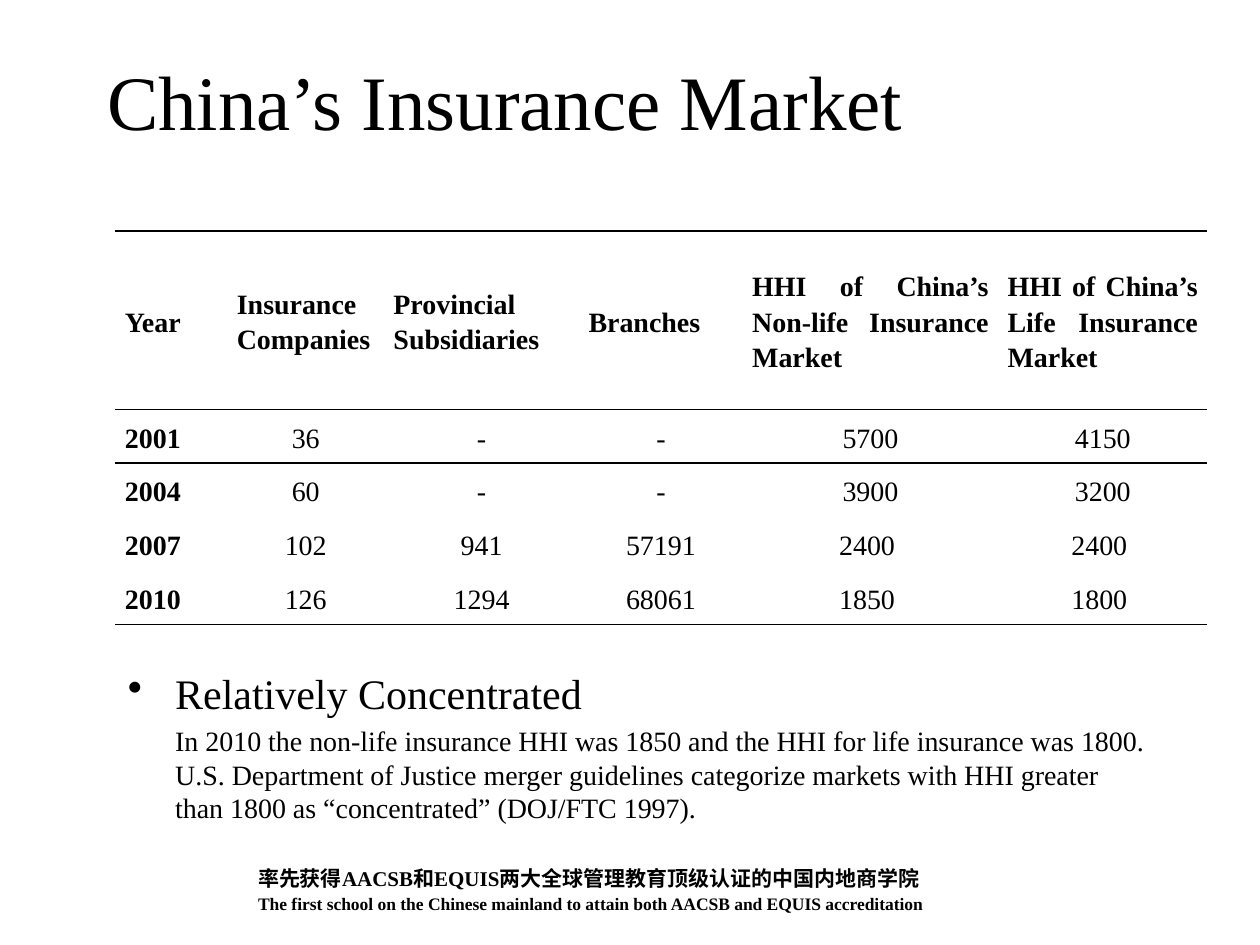
from lxml.etree import SubElement
from pptx import Presentation
from pptx.dml.color import RGBColor
from pptx.enum.text import MSO_ANCHOR, MSO_AUTO_SIZE, PP_ALIGN
from pptx.oxml.ns import qn
from pptx.util import Pt

BLACK = RGBColor(0, 0, 0)
FONT = "Times New Roman"
PLAIN_TABLE_STYLE = "{2D5ABB26-0587-4C30-8999-92F81FD0307C}"

COLUMN_WIDTHS = [64, 89.5, 111.5, 93.5, 146, 119.5]
ROW_HEIGHTS = [102] + [30.7] * 4
MARKET_ROWS = [
    ["Year", "Insurance Companies", "Provincial Subsidiaries", "Branches",
     "HHI of China’s Non-life Insurance Market",
     "HHI of China’s Life Insurance Market"],
    ["2001", "36", "-", "-", "5700", "4150"],
    ["2004", "60", "-", "-", "3900", "3200"],
    ["2007", "102", "941", "57191", "2400 ", "2400 "],
    ["2010", "126", "1294", "68061", "1850 ", "1800 "],
]


class SlideBuilder:
    def __init__(self, page):
        self.page = page

    def add_text(self, para, text, size, bold=False, align=PP_ALIGN.LEFT,
                 line_spacing=None):
        para.alignment = align
        if line_spacing:
            para.line_spacing = line_spacing
        span = para.add_run()
        span.text = text
        span.font.name = FONT
        span.font.size = Pt(size)
        span.font.bold = bold
        span.font.color.rgb = BLACK

    def title(self, text, left, top, width, height):
        box = self.page.shapes.title
        box.left, box.top, box.width, box.height = map(
            Pt, (left, top, width, height))
        frame = box.text_frame
        frame.auto_size = MSO_AUTO_SIZE.NONE
        frame.vertical_anchor = MSO_ANCHOR.MIDDLE
        self.add_text(frame.paragraphs[0], text, 44)

    def text_box(self, left, top, width, height, anchor=MSO_ANCHOR.TOP):
        box = self.page.shapes.add_textbox(*map(Pt, (left, top, width, height)))
        frame = box.text_frame
        frame.word_wrap = True
        frame.vertical_anchor = anchor
        return frame

    def indent(self, para, bullet=None):
        """Indent a paragraph, hanging its bullet in the margin if it has one."""
        properties = para._p.get_or_add_pPr()
        properties.set("marL", str(Pt(27)))
        properties.set("indent", str(-Pt(27) if bullet else 0))
        if bullet:
            SubElement(properties, qn("a:buChar"), char=bullet)
        else:
            SubElement(properties, qn("a:buNone"))

    def rule(self, cell, side):
        """Draw a black line on the "T" (top) or "B" (bottom) side of a cell."""
        line = SubElement(cell._tc.get_or_add_tcPr(), qn(f"a:ln{side}"),
                          w=str(Pt(1)))
        fill = SubElement(line, qn("a:solidFill"))
        SubElement(fill, qn("a:srgbClr"), val=str(BLACK))

    def table(self, rows, left, top, widths, heights):
        table = self.page.shapes.add_table(
            len(rows), len(widths), Pt(left), Pt(top),
            Pt(sum(widths)), Pt(sum(heights))).table
        table.horz_banding = False
        table._tbl.tblPr.find(qn("a:tableStyleId")).text = PLAIN_TABLE_STYLE
        for column, width in zip(table.columns, widths):
            column.width = Pt(width)
        for row, height in zip(table.rows, heights):
            row.height = Pt(height)
        for r, texts in enumerate(rows):
            for c, text in enumerate(texts):
                cell = table.cell(r, c)
                cell.vertical_anchor = MSO_ANCHOR.MIDDLE
                cell.margin_left = cell.margin_right = Pt(5.4)
                cell.margin_top = cell.margin_bottom = 0
                if r in (0, 1):
                    self.rule(cell, "T")
                if r in (0, len(rows) - 1):
                    self.rule(cell, "B")
                cell.fill.background()
                heading = r == 0 or c == 0
                align = PP_ALIGN.JUSTIFY if heading else PP_ALIGN.CENTER
                self.add_text(cell.text_frame.paragraphs[0], text, 16, heading,
                              align, 1.15)


def main():
    deck = Presentation()
    deck.slide_width, deck.slide_height = Pt(720), Pt(540)
    builder = SlideBuilder(deck.slides.add_slide(deck.slide_layouts[5]))

    footer = builder.text_box(140.4, 484, 427.7, 41.8, MSO_ANCHOR.BOTTOM)
    builder.add_text(footer.paragraphs[0],
                     "率先获得AACSB和EQUIS两大全球管理教育顶级认证的中国内地商学院",
                     12, bold=True, line_spacing=1.1)
    builder.add_text(footer.add_paragraph(),
                     "The first school on the Chinese mainland to attain both "
                     "AACSB and EQUIS accreditation",
                     10, bold=True, line_spacing=1.1)

    builder.title("China’s Insurance Market", 54, 12, 612, 90)

    body = builder.text_box(66, 378, 600, 102)
    point = body.paragraphs[0]
    builder.indent(point, "•")
    builder.add_text(point, "Relatively Concentrated", 24)
    detail = body.add_paragraph()
    builder.indent(detail)
    detail.space_before = Pt(3.2)
    builder.add_text(detail,
                     "In 2010 the non-life insurance HHI was 1850 and the HHI "
                     "for life insurance was 1800. U.S. Department of Justice "
                     "merger guidelines categorize markets with HHI greater "
                     "than 1800 as “concentrated” (DOJ/FTC 1997).", 16)

    builder.table(MARKET_ROWS, 66, 132, COLUMN_WIDTHS, ROW_HEIGHTS)
    deck.save("out.pptx")


if __name__ == "__main__":
    main()
